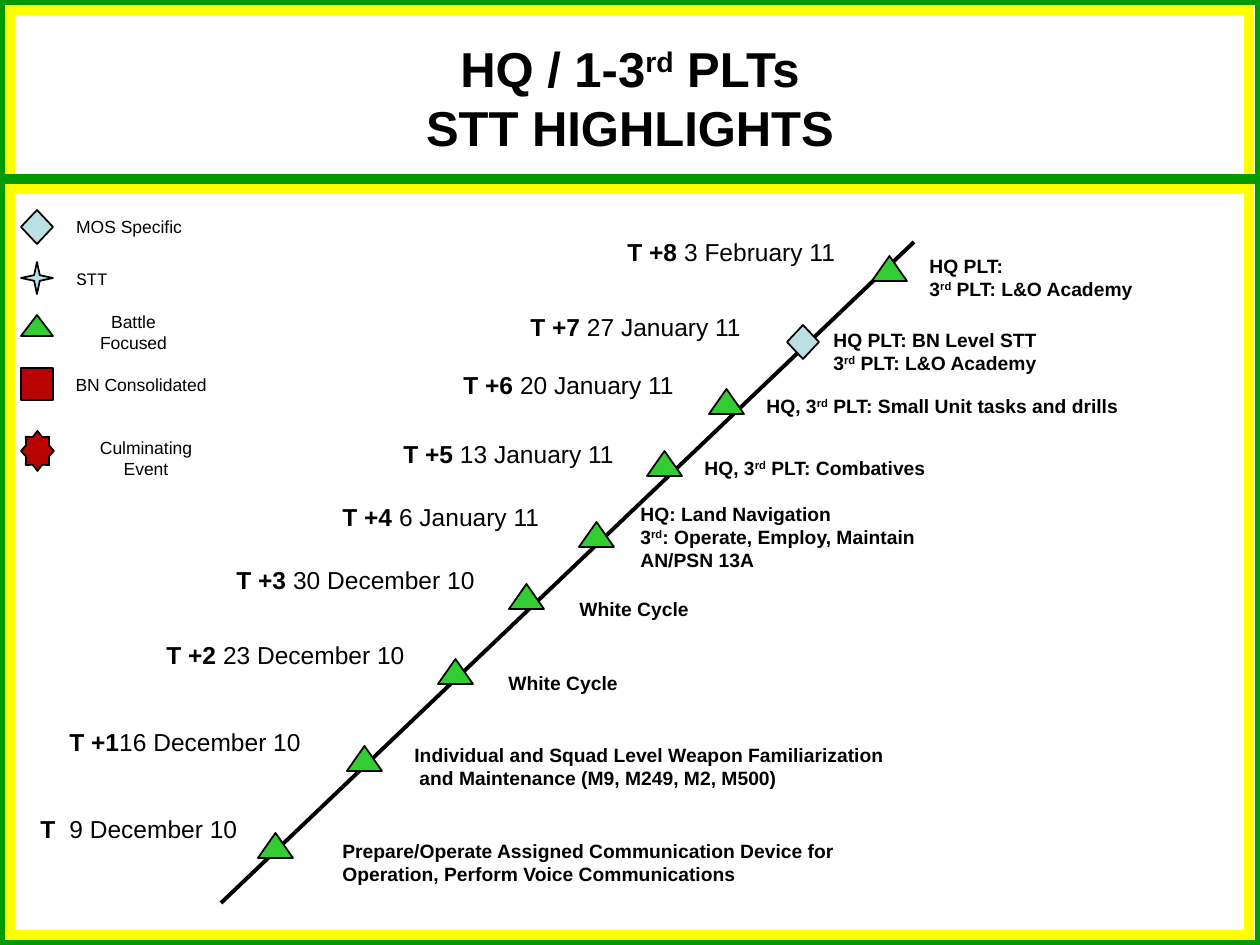
from pptx import Presentation
from pptx import util as u
from pptx.dml.color import RGBColor
from pptx.enum import shapes, text
from pptx.oxml.ns import qn
from lxml import etree

SCALE = 914400 / 126
BLACK, YELLOW, FRAME_GREEN = "000000", "FFFF00", "009900"
GREEN, BLUE, RED = "33CC33", "BBE0E3", "B90303"
KINDS = shapes.MSO_SHAPE
TRIANGLE = (KINDS.ISOSCELES_TRIANGLE, GREEN, 35, 25)
DIAMOND = (KINDS.DIAMOND, BLUE, 32, 34)

LEGEND = [
    (DIAMOND, 0, "MOS Specific", 0, 132, "Arial"),
    ((KINDS.STAR_4_POINT, BLUE, 32, 32), 52, "STT", 52, 58, "Courier New"),
    ((KINDS.ISOSCELES_TRIANGLE, GREEN, 32, 21), 105, "Battle Focused", 95, 141, "Arial"),
    ((KINDS.RECTANGLE, RED, 32, 32), 158, "BN Consolidated", 158, 156, "Arial"),
    ((KINDS.STAR_8_POINT, RED, 33, 40), 221, "Culminating Event", 221, 166, "Arial"),
]

MILESTONES = [
    (TRIANGLE, (258, 649), "T\t", "9 December 10", (28, 624, 248),
     ["Prepare/Operate Assigned Communication Device for",
      "Operation, Perform Voice Communications"], (330, 649, 587)),
    (TRIANGLE, (347, 562), "T +1", "16 December 10", (57, 537, 287),
     ["Individual and Squad Level Weapon Familiarization",
      "and Maintenance (M9, M249, M2, M500)"], (402, 553, 551)),
    (TRIANGLE, (438, 475), "T +2 ", "23 December 10", (154, 450, 295),
     ["White Cycle"], (496, 481, 151)),
    (TRIANGLE, (509, 400), "T +3 ", "30 December 10", (224, 375, 295),
     ["White Cycle"], (567, 407, 151)),
    (TRIANGLE, (579, 338), "T +4 ", "6 January 11", (330, 312, 248),
     ["HQ: Land Navigation", "3^rd^: Operate, Employ, Maintain", "AN/PSN 13A"],
     (628, 312, 345)),
    (TRIANGLE, (647, 267), "T +5 ", "13 January 11", (391, 249, 263),
     ["HQ, 3^rd^ PLT: Combatives"], (692, 266, 289)),
    (TRIANGLE, (709, 205), "T +6 ", "20 January 11", (451, 180, 263),
     ["HQ, 3^rd^ PLT: Small Unit tasks and drills"], (754, 204, 428)),
    (DIAMOND, (787, 141), "T +7 ", "27 January 11", (518, 122, 263),
     ["HQ PLT: BN Level STT", "3^rd^ PLT: L&O Academy"], (821, 138, 263)),
    (TRIANGLE, (872, 72), "T +8 ", "3 February 11", (615, 47, 233),
     ["HQ PLT:", "3^rd^ PLT: L&O Academy"], (917, 64, 236)),
]


def px(length):
    """Turn pixels into EMU."""
    return u.Emu(round(length * SCALE))


def colour(value):
    """Turn a hex string into a colour."""
    return RGBColor.from_string(value)


def add_span(para, words, size, bold=False, font="Arial", raised=False):
    """Add one run to a paragraph."""
    span = para.add_run()
    span.text = words
    span.font.name = font
    span.font.size = u.Pt(size)
    span.font.bold = bold
    span.font.color.rgb = colour(BLACK)
    if raised:
        span.font._element.set("baseline", "30000")


def fill_lines(frame, lines, size):
    """Write bold lines in which ^marks^ enclose superscript."""
    for index, line in enumerate(lines):
        para = frame.add_paragraph() if index else frame.paragraphs[0]
        for part, words in enumerate(line.split("^")):
            add_span(para, words, size, bold=True, raised=part % 2 == 1)
    return frame


def add_text(page, left, top, width, height):
    """Add an unwrapped text box and return its frame."""
    box = page.shapes.add_textbox(px(left), px(top), px(width), px(height))
    box.text_frame.word_wrap = False
    box.text_frame.auto_size = text.MSO_AUTO_SIZE.SHAPE_TO_FIT_TEXT
    return box.text_frame


def add_shape(page, kind, left, top, width, height, fill=None, line=BLACK, weight=1):
    """Add an outlined preset shape."""
    shape = page.shapes.add_shape(kind, px(left), px(top), px(width), px(height))
    shape.shadow.inherit = False
    if fill:
        shape.fill.solid()
        shape.fill.fore_color.rgb = colour(fill)
    else:
        shape.fill.background()
    shape.line.color.rgb = colour(line)
    shape.line.width = u.Pt(weight)


def add_line(page, start, end, line, weight):
    """Add a straight line without shadow."""
    rule = page.shapes.add_connector(
        shapes.MSO_CONNECTOR.STRAIGHT, *map(px, start), *map(px, end))
    rule.line.color.rgb = colour(line)
    rule.line.width = u.Pt(weight)
    etree.SubElement(rule._element.spPr, qn("a:effectLst"))


def add_frame(page, width, height):
    """Draw the double border and the rules across the page."""
    rectangle = KINDS.RECTANGLE
    add_shape(page, rectangle, 10, 10, width - 21, height - 10, None, YELLOW, 6)
    add_shape(page, rectangle, 0, 0, width, height, None, FRAME_GREEN, 6)
    for inset, y, line in ((10, 935, YELLOW), (10, 189, YELLOW), (0, 179, FRAME_GREEN)):
        add_line(page, (inset, y), (width - inset, y), line, 6)


def add_title(page, left, top, width, height):
    """Place the two-line title in its placeholder."""
    title = page.shapes.title
    title.left, title.top, title.width, title.height = map(px, (left, top, width, height))
    title.text_frame.vertical_anchor = text.MSO_ANCHOR.MIDDLE
    fill_lines(title.text_frame, ["HQ / 1-3^rd^ PLTs", "STT HIGHLIGHTS"], 28)
    for para in title.text_frame.paragraphs:
        para.alignment = text.PP_ALIGN.CENTER


def add_legend(page, left, top):
    """List the symbols with their meanings."""
    for (kind, fill, width, height), icon_y, words, text_y, text_width, font in LEGEND:
        add_shape(page, kind, left, top + icon_y, width, height, fill)
        para = add_text(page, left + 42, top + text_y, text_width, 34).paragraphs[0]
        para.alignment = text.PP_ALIGN.CENTER
        add_span(para, words, 10, font=font)


def add_timeline(page, left, top):
    """Draw the rising line with its dated milestones."""
    add_line(page, (left + 221, top + 719), (left + 914, top + 58), BLACK, 2.25)
    for marker, spot, tag, date, label, lines, caption in MILESTONES:
        kind, fill, width, height = marker
        add_shape(page, kind, left + spot[0], top + spot[1], width, height, fill)
        x, y, label_width = label
        para = add_text(page, left + x, top + y, label_width, 50).paragraphs[0]
        if "\t" in tag:
            tabs = etree.SubElement(para._p.get_or_add_pPr(), qn("a:tabLst"))
            etree.SubElement(tabs, qn("a:tab"), pos=str(px(29)), algn="l")
        add_span(para, tag, 14, bold=True)
        add_span(para, date, 14)
        x, y, caption_width = caption
        frame = add_text(page, left + x, top + y, caption_width, 15 + 28 * len(lines))
        fill_lines(frame, lines, 11)
        if lines[-1].startswith("and "):
            frame.paragraphs[-1]._p.get_or_add_pPr().set("marL", str(px(5)))


def main():
    """Build and save the deck."""
    deck = Presentation()
    deck.slide_width, deck.slide_height = px(1260), px(945)
    page = deck.slides.add_slide(deck.slide_layouts[5])
    add_frame(page, 1260, 945)
    add_title(page, 63, 0, 1134, 195)
    add_legend(page, 21, 210)
    add_timeline(page, 0, 184)
    deck.save("out.pptx")


if __name__ == "__main__":
    main()
